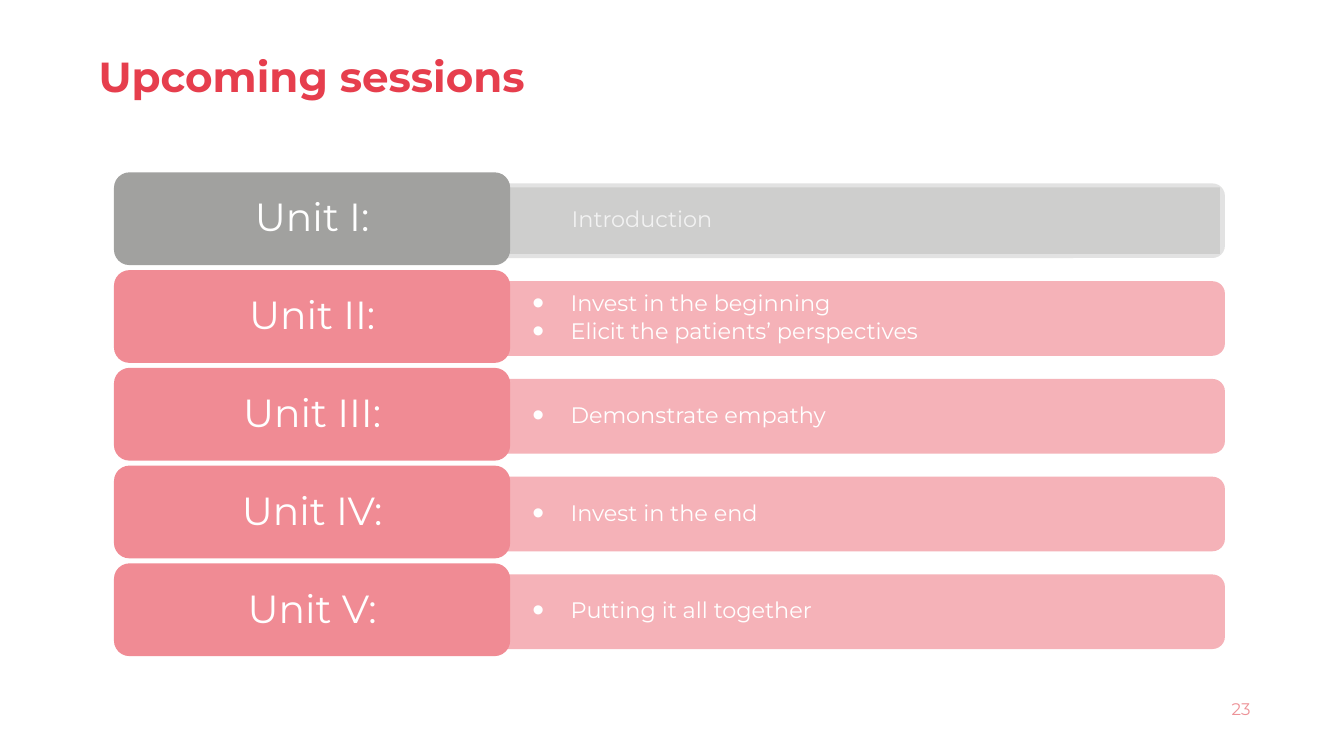
from dataclasses import dataclass

from lxml import etree
from pptx import Presentation
from pptx import util as u
from pptx.dml.color import RGBColor
from pptx.enum import shapes, text
from pptx.oxml import ns

FACE = "Montserrat"
WHITE, RED, PINK, ROSE, GREY = "FFFFFF", "E63E4D", "F5B2B8", "F08B94", "A1A19F"
KIND = shapes.MSO_SHAPE
ALIGN = text.PP_ALIGN
TOP, PITCH = 22.8, 12.93

deck = Presentation()
deck.slide_width, deck.slide_height = u.Inches(13.33), u.Inches(7.5)
page = deck.slides.add_slide(deck.slide_layouts[6])


@dataclass
class Box:
    left: float
    top: float
    width: float
    height: float

    def down(self, rows: float) -> "Box":
        return Box(self.left, self.top + rows, self.width, self.height)

    def frame(self) -> tuple[int, int, int, int]:
        return (col(self.left), row(self.top), col(self.width), row(self.height))


@dataclass
class Unit:
    name: str
    topics: list[str]
    tab: str = ROSE
    band: str = PINK
    ink: str = WHITE
    alpha: int = 100
    dots: bool = True


TAB = Box(8.48, TOP, 29.48, 12.27)
LABEL = Box(8.93, TOP + 0.67, 28.58, 11.07)
BAND = Box(37.58, TOP + 1.47, 53.56, 9.87)
PANEL = Box(37.58, TOP + 2, 53.19, 8.8)
TITLE = Box(6.6, 6.27, 86.27, 8.4)
NUMBER = Box(71.27, 91.2, 22.51, 5.33)

UNITS = [
    Unit("Unit I:", ["Introduction"], GREY, GREY, "F2F2F2", 30, False),
    Unit("Unit II:", ["Invest in the beginning", "Elicit the patients’ perspectives"]),
    Unit("Unit III:", ["Demonstrate empathy"]),
    Unit("Unit IV:", ["Invest in the end"]),
    Unit("Unit V:", ["Putting it all together"]),
]


def col(share: float) -> int:
    return round(deck.slide_width * share / 100)


def row(share: float) -> int:
    return round(deck.slide_height * share / 100)


def paint(hue: str) -> RGBColor:
    return RGBColor.from_string(hue)


def tag(node, name: str, **vals: str):
    return etree.SubElement(node, ns.qn(name), vals)


def block(kind, box: Box, hue: str, alpha: int = 100, turn: bool = False):
    left, top, width, height = box.frame()
    if turn:
        left += (width - height) // 2
        top -= (width - height) // 2
        width, height = height, width
    shape = page.shapes.add_shape(kind, left, top, width, height)
    shape.rotation = 90 if turn else 0
    shape.shadow.inherit = False
    shape.line.fill.background()
    shape.fill.solid()
    shape.fill.fore_color.rgb = paint(hue)
    if alpha < 100:
        fill = shape.element.spPr.find(ns.qn("a:solidFill"))
        tag(fill[0], "a:alpha", val=str(alpha * 1000))
    return shape


def indent(para, dots: bool) -> None:
    props = para._p.get_or_add_pPr()
    props.set("marL", str(u.Inches(0.38 if dots else 0.39)))
    props.set("indent", str(u.Inches(-0.38 if dots else 0)))
    if dots:
        tag(tag(props, "a:buClr"), "a:srgbClr", val=WHITE)
        tag(props, "a:buSzPct", val="150000")
        tag(props, "a:buFont", typeface="Arial")
        tag(props, "a:buChar", char="•")


def style(para, size: float, hue: str, align=ALIGN.LEFT, bold: bool = False) -> None:
    para.alignment = align
    para.line_spacing = 0.9
    for run in para.runs:
        run.font.name, run.font.size = FACE, u.Pt(size)
        run.font.bold = bold
        run.font.color.rgb = paint(hue)


def write(shape, words: str, pad: tuple[float, float] = (0.1, 0.05)):
    frame = shape.text_frame
    frame.word_wrap = True
    frame.vertical_anchor = text.MSO_ANCHOR.MIDDLE
    frame.margin_left = frame.margin_right = u.Inches(pad[0])
    frame.margin_top = frame.margin_bottom = u.Inches(pad[1])
    frame.text = words
    return frame.paragraphs


def draw(unit: Unit, step: float) -> None:
    block(KIND.ROUND_2_SAME_RECTANGLE, BAND.down(step), unit.band, unit.alpha, True)
    panel = block(KIND.RECTANGLE, PANEL.down(step), unit.band, unit.alpha)
    for para in write(panel, "\n".join(unit.topics), (0.27, 0.14)):
        indent(para, unit.dots)
        style(para, 16, unit.ink)
        para.space_after = u.Pt(2.4)
    block(KIND.ROUNDED_RECTANGLE, TAB.down(step), unit.tab)
    label = block(KIND.RECTANGLE, LABEL.down(step), unit.tab)
    style(write(label, unit.name, (0.17, 0.08))[0], 28, WHITE, ALIGN.CENTER)


def note(box: Box, words: str, size: float, hue: str, align=ALIGN.LEFT, bold: bool = False) -> None:
    shape = page.shapes.add_textbox(*box.frame())
    style(write(shape, words)[0], size, hue, align, bold)


def main() -> None:
    for step, unit in enumerate(UNITS):
        draw(unit, step * PITCH)
    note(NUMBER, "23", 12, "ED9297", ALIGN.RIGHT)
    note(TITLE, "Upcoming sessions", 30, RED, bold=True)
    deck.save("out.pptx")


if __name__ == "__main__":
    main()
